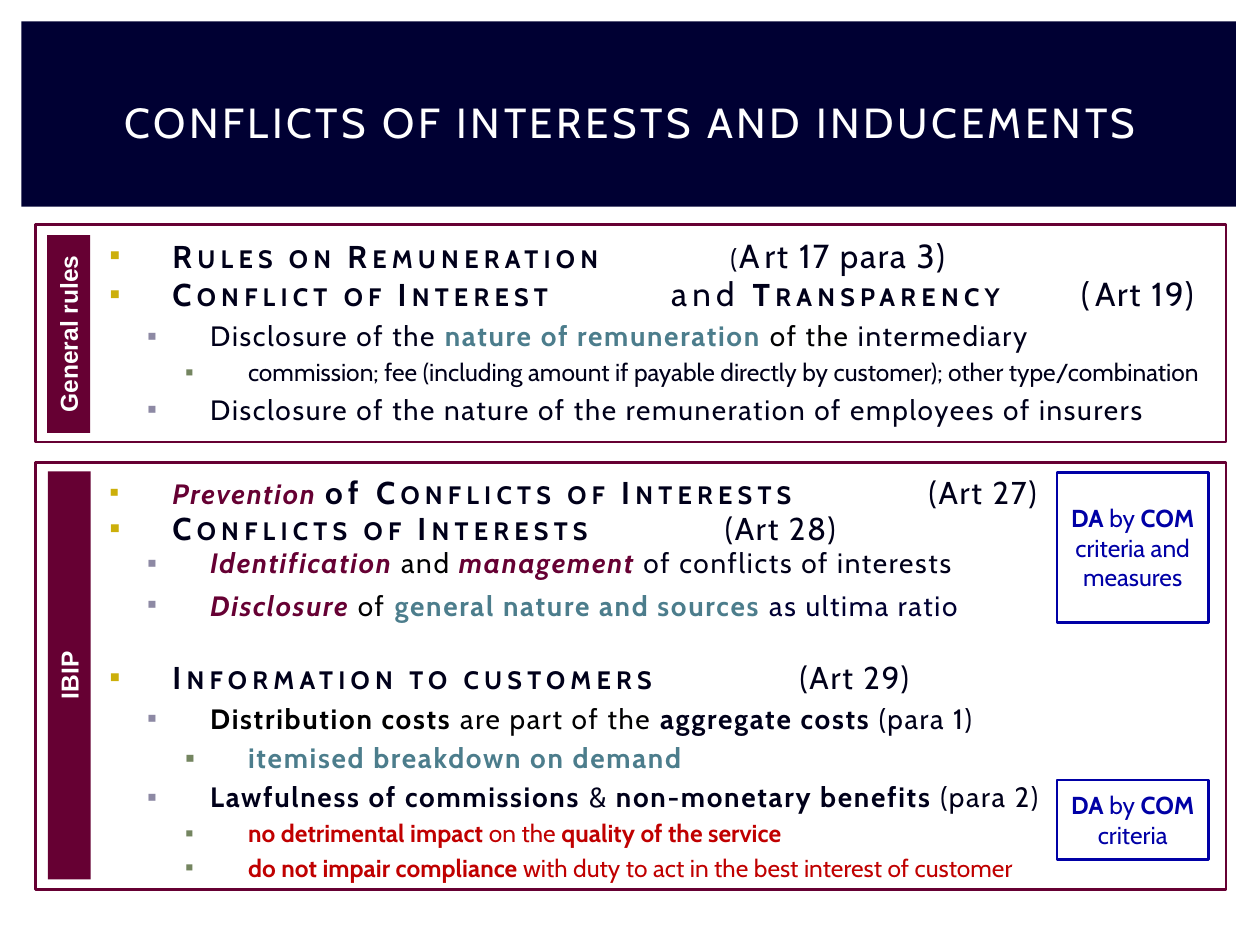
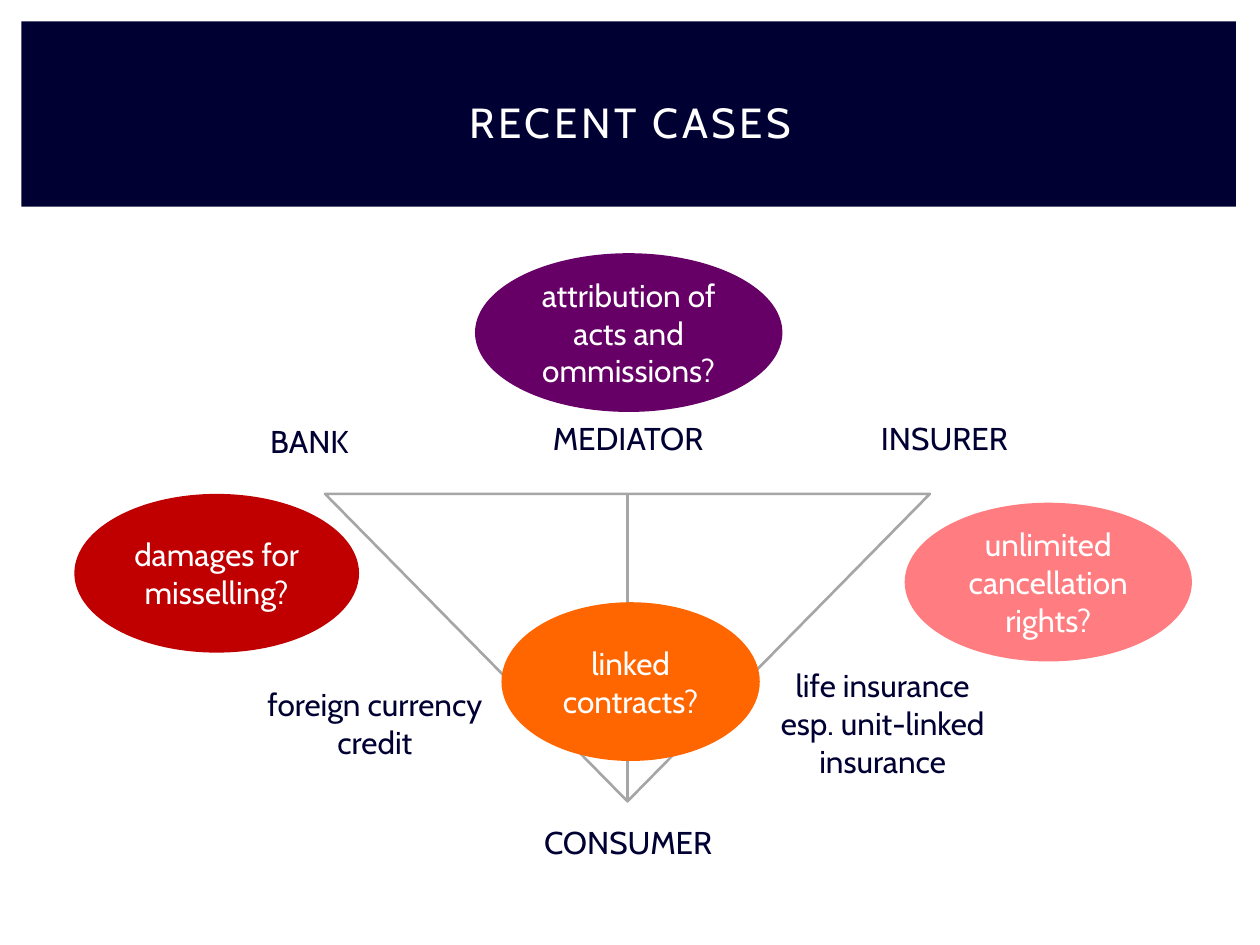
from dataclasses import dataclass
from typing import NamedTuple

from lxml import etree
from pptx import Presentation
from pptx.dml.color import RGBColor
from pptx.enum.shapes import MSO_CONNECTOR as Link, MSO_SHAPE as Kind
from pptx.enum.text import MSO_ANCHOR as Anchor, PP_ALIGN as Align
from pptx.oxml.ns import qn
from pptx.util import Inches, Pt

FONT = "Cabin"
NAVY, INK, WINE, TEAL = "000033", "00001A", "660033", "4C7D8C"
BLACK, WHITE, RED, BLUE, GREY = "000000", "FFFFFF", "C00000", "0000A6", "A6A6A6"


class Area(NamedTuple):
    left: float
    top: float
    width: float
    height: float


@dataclass
class Bit:
    text: str
    size: float = 16
    color: str = INK
    bold: bool = False
    slant: bool = False
    gap: float = 1
    small: bool = False
    font: str = FONT


@dataclass
class Row:
    level: int
    bits: list[Bit]
    tight: bool = False
    before: float = 0


@dataclass
class Label:
    area: Area
    lines: list[str]
    fill: str = ""


class Level(NamedTuple):
    indent: float
    mark: str
    before: float


LEVELS = {
    1: Level(0.85, "CCAF0A", 3.6),
    2: Level(1.15, "8D89A4", 3.2),
    3: Level(1.45, "748560", 2.8),
}


def rgb(code: str) -> RGBColor:
    return RGBColor.from_string(code)


def caps(text: str) -> Bit:
    return Bit(text, 18, bold=True, gap=3, small=True)


def art(text: str, size: float = 18) -> Bit:
    return Bit(text, size)


def strong(text: str, color: str = INK) -> Bit:
    return Bit(text, color=color, bold=True)


def key(text: str) -> Bit:
    return Bit(text, color=WINE, bold=True, slant=True)


def note(text: str, color: str = RED, bold: bool = False) -> Bit:
    return Bit(text, 14, color, bold, gap=0)


def write(para, bits: list[Bit]) -> None:
    for bit in bits:
        run = para.add_run()
        run.text = bit.text
        font = run.font
        font.name, font.size = bit.font, Pt(bit.size)
        font.bold, font.italic = bit.bold, bit.slant
        font.color.rgb = rgb(bit.color)
        props = run._r.get_or_add_rPr()
        props.set("spc", str(int(bit.gap * 100)))
        if bit.small:
            props.set("cap", "small")


def fill_text(shape, lines: list[list[Bit]], anchor=Anchor.MIDDLE) -> None:
    frame = shape.text_frame
    frame.word_wrap = True
    frame.vertical_anchor = anchor
    for i, bits in enumerate(lines):
        para = frame.add_paragraph() if i else frame.paragraphs[0]
        para.alignment = Align.CENTER
        write(para, bits)


def add_form(slide, kind, area: Area, fill: str = "", line: str = "", turn: float = 0):
    shape = slide.shapes.add_shape(kind, *map(Inches, area))
    shape.shadow.inherit = False
    shape.rotation = turn
    if fill:
        shape.fill.solid()
        shape.fill.fore_color.rgb = rgb(fill)
    else:
        shape.fill.background()
    if line:
        shape.line.color.rgb = rgb(line)
        shape.line.width = Pt(1.5)
    else:
        shape.line.fill.background()
    return shape


def add_box(slide, area: Area):
    return slide.shapes.add_textbox(*map(Inches, area))


def add_page(deck, title: str):
    slide = deck.slides.add_slide(deck.slide_layouts[6])
    add_form(slide, Kind.RECTANGLE, Area(0.17, 0.17, 9.64, 1.47), NAVY)
    box = add_box(slide, Area(0.42, 0.39, 9.17, 1.15))
    fill_text(box, [[Bit(title, 24, WHITE, gap=2)]])
    return slide


def add_rows(slide, area: Area, rows: list[Row]) -> None:
    frame = add_box(slide, area).text_frame
    frame.word_wrap = True
    for i, row in enumerate(rows):
        para = frame.add_paragraph() if i else frame.paragraphs[0]
        level = LEVELS[row.level]
        para.level = row.level - 1
        para.line_spacing = 0.8 if row.tight else 1.0
        para.space_before = Pt(row.before or level.before)
        props = para._p.get_or_add_pPr()
        props.set("marL", str(Inches(level.indent)))
        props.set("indent", str(Inches(-0.5)))
        tint = etree.SubElement(props, qn("a:buClr"))
        etree.SubElement(tint, qn("a:srgbClr")).set("val", level.mark)
        etree.SubElement(props, qn("a:buFont")).set("typeface", "Arial")
        etree.SubElement(props, qn("a:buChar")).set("char", "▪")
        write(para, row.bits)


def add_tab(slide, area: Area, text: str) -> None:
    shape = add_form(slide, Kind.RECTANGLE, area, WINE, turn=270)
    bit = Bit(text, 14, WHITE, True, gap=0, font="Arial")
    fill_text(shape, [[bit]], Anchor.TOP)


def add_act(slide, area: Area, text: str) -> None:
    shape = add_form(slide, Kind.RECTANGLE, area, line=BLUE)
    head = [note("DA ", BLUE, True), note("by", BLUE), note(" COM", BLUE, True)]
    fill_text(shape, [head, [note(text, BLUE)]])


def add_label(slide, label: Label) -> None:
    if label.fill:
        shape = add_form(slide, Kind.OVAL, label.area, label.fill)
    else:
        shape = add_box(slide, label.area)
    color = WHITE if label.fill else NAVY
    anchor = Anchor.MIDDLE if label.fill else Anchor.TOP
    fill_text(shape, [[Bit(line, 18, color, gap=0)] for line in label.lines], anchor)


ROWS = [
    Row(1, [caps("Rules on Remuneration "), Bit("(A", 19, small=True),
            art("rt 17 para 3)", 19)], True),
    Row(1, [caps("Conflict of Interest"), Bit(" and ", 19, gap=3),
            caps("Transparency"), Bit(" ", 19, bold=True, gap=3),
            Bit("(", 19, gap=3), art("Art 19)", 19)], True),
    Row(2, [Bit("Disclosure of the "), strong("nature of remuneration ", TEAL),
            Bit("of the ", color=BLACK), Bit("intermediary")]),
    Row(3, [note("commission; fee (including amount if payable directly by "
                 "customer); other type/combination", INK)]),
    Row(2, [Bit("Disclosure of the nature of the remuneration of employees of insurers")]),
    Row(1, [key("Prevention "), Bit("of ", 18, bold=True, gap=3),
            caps("Conflicts of Interests "), art("(Art 27)")], True, 31),
    Row(1, [caps("Conflicts of Interests "), art("(Art 28)")], True),
    Row(2, [key("Identification "), Bit("and ", color=BLACK), key("management "),
            Bit("of conflicts of interests")], True),
    Row(2, [key("Disclosure "), Bit("of", color=BLACK), Bit(" ", 18),
            strong("general nature and sources ", TEAL),
            Bit("as ultima ratio", color=NAVY)]),
    Row(1, [caps("Information to customers "), art("(Art 29)")], True, 24.5),
    Row(2, [strong("Distribution costs ", BLACK), Bit("are part of the ", color=BLACK),
            strong("aggregate costs "), Bit("(para 1)")]),
    Row(3, [strong("itemised breakdown on demand", TEAL)], before=3.2),
    Row(2, [strong("Lawfulness of commissions "), Bit("& "),
            strong("non-monetary benefits "), Bit("(para 2)")]),
    Row(3, [note("no detrimental impact ", bold=True), note("on the "),
            note("quality of the service", bold=True)]),
    Row(3, [note("do not impair compliance ", bold=True),
            note("with duty to act in the best interest of customer")]),
]

LABELS = [
    Label(Area(1.43, 3.3, 2.05, 0.4), ["BANK"]),
    Label(Area(6.47, 3.28, 2.05, 0.4), ["INSURER"]),
    Label(Area(3.96, 3.28, 2.05, 0.4), ["MEDIATOR"]),
    Label(Area(3.96, 6.48, 2.05, 0.4), ["CONSUMER"]),
    Label(Area(1.95, 5.39, 2.05, 0.71), ["foreign currency credit"]),
    Label(Area(5.98, 5.24, 2.05, 1.01), ["life insurance", "esp. unit-linked insurance"]),
    Label(Area(7.18, 3.99, 2.28, 1.26), ["unlimited cancellation rights?"], "FF7C80"),
    Label(Area(3.77, 2.01, 2.44, 1.26), ["attribution of acts and ommissions?"], "660066"),
    Label(Area(3.98, 4.78, 2.05, 1.26), ["linked contracts?"], "FF6600"),
    Label(Area(0.59, 3.92, 2.26, 1.26), ["damages for misselling?"], RED),
]


def add_rules(deck) -> None:
    slide = add_page(deck, "CONFLICTS OF INTERESTS AND INDUCEMENTS")
    add_rows(slide, Area(0.42, 1.88, 9.39, 5.1), ROWS)
    add_act(slide, Area(8.39, 3.75, 1.2, 1.19), "criteria and measures")
    add_act(slide, Area(8.39, 6.19, 1.2, 0.63), "criteria")
    add_tab(slide, Area(-1.07, 5.19, 3.24, 0.34), "IBIP")
    add_tab(slide, Area(-0.24, 2.48, 1.57, 0.34), "General rules")
    for top, height in ((1.78, 1.73), (3.67, 3.39)):
        add_form(slide, Kind.RECTANGLE, Area(0.28, top, 9.45, height), line=WINE)


def add_cases(deck) -> None:
    slide = add_page(deck, "RECENT CASES")
    add_form(slide, Kind.ISOSCELES_TRIANGLE, Area(2.58, 3.92, 4.8, 2.44),
             line=GREY, turn=180)
    ends = map(Inches, (4.98, 3.92, 4.98, 6.36))
    stem = slide.shapes.add_connector(Link.STRAIGHT, *ends)
    stem.line.color.rgb = rgb(GREY)
    stem.line.width = Pt(2.25)
    etree.SubElement(stem._element.spPr, qn("a:effectLst"))
    for label in LABELS:
        add_label(slide, label)


def main() -> None:
    deck = Presentation()
    deck.slide_width, deck.slide_height = Inches(10), Inches(7.5)
    add_rules(deck)
    add_cases(deck)
    deck.save("out.pptx")


if __name__ == "__main__":
    main()
